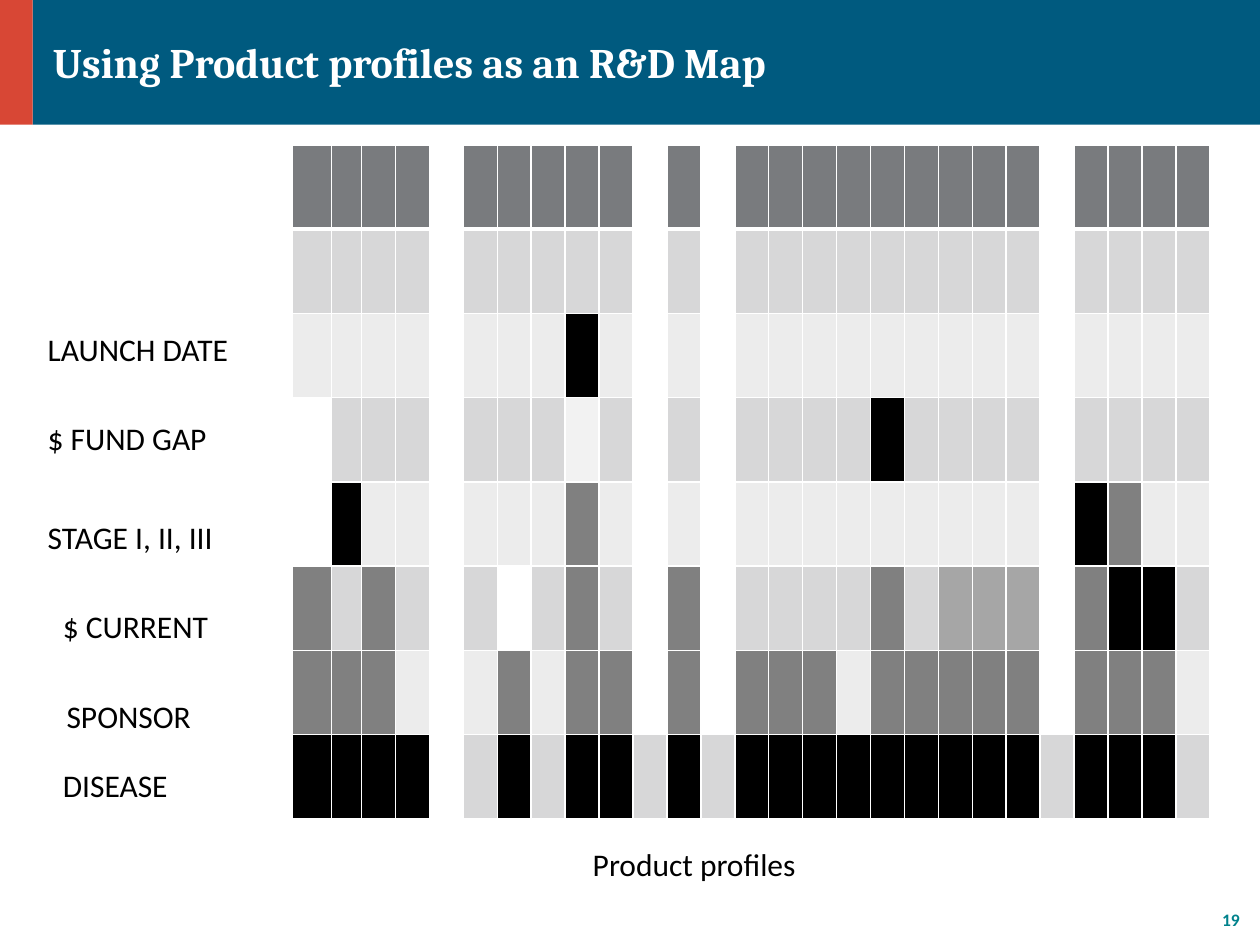
from dataclasses import dataclass

from lxml.etree import SubElement
from pptx import Presentation
from pptx.dml.color import RGBColor
from pptx.enum.shapes import MSO_SHAPE
from pptx.enum.text import MSO_ANCHOR, PP_ALIGN
from pptx.oxml.ns import qn
from pptx.util import Inches, Pt


@dataclass(frozen=True)
class Theme:
    blue: str = "005A7F"
    red: str = "D84735"
    teal: str = "00828C"
    white: str = "FFFFFF"
    black: str = "000000"
    heading_font: str = "Cambria"
    body_font: str = "Calibri"
    title_size: int = 24
    label_size: int = 18
    number_size: int = 10


THEME = Theme()

# One letter per cell shade
SHADES = {
    "H": "797B7E", "L": "D7D7D8", "P": "ECECEC", "F": "F2F2F2",
    "M": "A6A6A6", "G": "808080", "K": THEME.black, ".": THEME.white,
}

# One string per table row, one letter per product profile
PROFILE_MAP = [
    "HHHH.HHHHH.H.HHHHHHHHH.HHHH",
    "LLLL.LLLLL.L.LLLLLLLLL.LLLL",
    "PPPP.PPPKP.P.PPPPPPPPP.PPPP",
    ".LLL.LLLFL.L.LLLLKLLLL.LLLL",
    ".KPP.PPPGP.P.PPPPPPPPP.KGPP",
    "GLGL.L.LGL.G.LLLLGLMMM.GKKL",
    "GGGP.PGPGG.G.GGGPGGGGG.GGGP",
    "KKKK.LKLKKLKLKKKKKKKKKLKKKL",
]

# Text, left, top, width
ROW_LABELS = [
    ("LAUNCH DATE", 0.28, 2.57, 1.73),
    ("$ FUND GAP", 0.28, 3.28, 1.51),
    ("STAGE I, II, III", 0.28, 4.06, 1.61),
    ("$ CURRENT", 0.4, 4.77, 1.38),
    ("SPONSOR", 0.43, 5.48, 1.38),
    ("DISEASE", 0.4, 6.03, 1.38),
]


def add_band(page, left, width, color):
    band = page.shapes.add_shape(
        MSO_SHAPE.RECTANGLE, Inches(left), 0, Inches(width), Inches(0.99))
    band.shadow.inherit = False
    band.fill.solid()
    band.fill.fore_color.rgb = RGBColor.from_string(color)
    band.line.fill.background()


def add_text(page, text, left, top, width, height=0.4, size=THEME.label_size,
             color=THEME.black, font=THEME.body_font, bold=False,
             align=PP_ALIGN.LEFT, tight=False, wrap=True):
    box = page.shapes.add_textbox(
        Inches(left), Inches(top), Inches(width), Inches(height))
    frame = box.text_frame
    frame.word_wrap = wrap
    if tight:
        frame.margin_left = frame.margin_right = 0
        frame.margin_top = frame.margin_bottom = 0
        frame.vertical_anchor = MSO_ANCHOR.MIDDLE
    para = frame.paragraphs[0]
    para.alignment = align
    span = para.add_run()
    span.text = text
    span.font.name = font
    span.font.size = Pt(size)
    span.font.bold = bold
    span.font.color.rgb = RGBColor.from_string(color)


def set_borders(cell, bottom):
    properties = cell._tc.get_or_add_tcPr()
    for index, (side, points) in enumerate(
            [("lnL", 1), ("lnR", 1), ("lnT", 1), ("lnB", bottom)]):
        line = properties.makeelement(qn(f"a:{side}"), {"w": str(Pt(points))})
        fill = SubElement(line, qn("a:solidFill"))
        SubElement(fill, qn("a:srgbClr"), val=THEME.white)
        properties.insert(index, line)  # borders come before the cell fill


def add_profile_map(page):
    row_count, column_count = len(PROFILE_MAP), len(PROFILE_MAP[0])
    width, height = 7.28, 5.35
    table = page.shapes.add_table(
        row_count, column_count, Inches(2.32), Inches(1.15),
        Inches(width), Inches(height)).table

    # The first two columns differ; the rest share what is left
    first_widths = [0.31, 0.23]
    rest = (width - sum(first_widths)) / (column_count - len(first_widths))
    for index, column in enumerate(table.columns):
        column.width = Inches(first_widths[index] if index < 2 else rest)
    for row in table.rows:
        row.height = Inches(height / row_count)

    for row_index, shades in enumerate(PROFILE_MAP):
        for column_index, shade in enumerate(shades):
            cell = table.cell(row_index, column_index)
            cell.fill.solid()
            cell.fill.fore_color.rgb = RGBColor.from_string(SHADES[shade])
            set_borders(cell, bottom=3 if row_index == 0 else 1)


def main():
    deck = Presentation()
    deck.slide_width, deck.slide_height = Inches(10), Inches(7.5)
    page = deck.slides.add_slide(deck.slide_layouts[6])

    # Header and page number
    add_band(page, 0.26, 9.74, THEME.blue)
    add_band(page, 0, 0.26, THEME.red)
    add_text(page, "19", 9.67, 7.21, 0.17, 0.17, size=THEME.number_size,
             color=THEME.teal, bold=True, align=PP_ALIGN.RIGHT,
             tight=True, wrap=False)
    add_text(page, "Using Product profiles as an R&D Map", 0.42, 0.29, 9.42,
             size=THEME.title_size, color=THEME.white,
             font=THEME.heading_font, bold=True, tight=True)

    # Map with its axis labels
    add_profile_map(page)
    add_text(page, "Product profiles", 2.24, 6.66, 6.54, align=PP_ALIGN.CENTER)
    for text, left, top, width in ROW_LABELS:
        add_text(page, text, left, top, width)

    deck.save("out.pptx")


if __name__ == "__main__":
    main()
